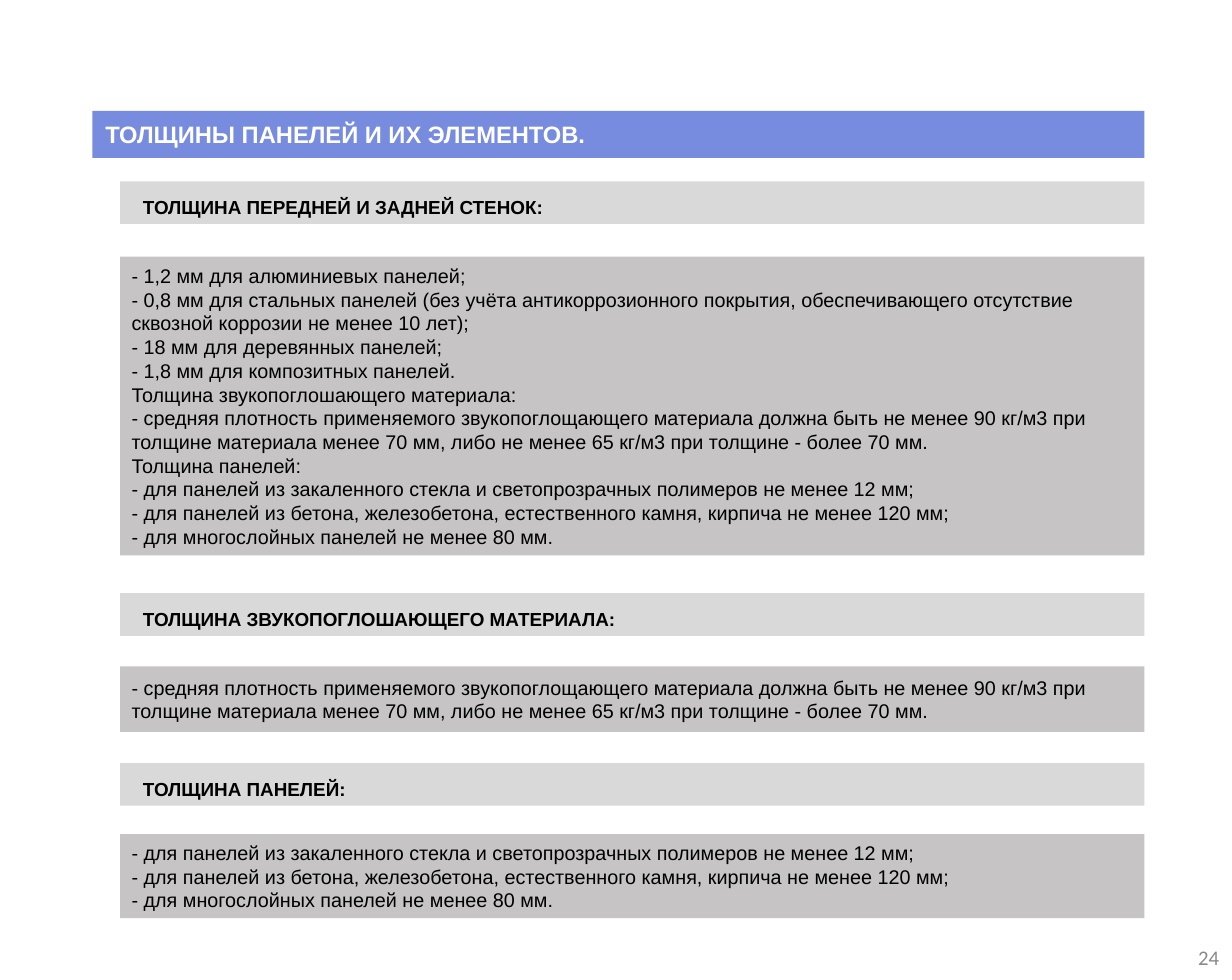
from pptx import Presentation
from pptx.dml.color import RGBColor
from pptx.enum.shapes import MSO_SHAPE
from pptx.enum.text import MSO_ANCHOR, PP_ALIGN
from pptx.util import Inches, Pt

TITLE = "ТОЛЩИНЫ ПАНЕЛЕЙ И ИХ ЭЛЕМЕНТОВ."
PAGE_NUMBER = "24"
DENSITY = [
    "- средняя плотность применяемого звукопоглощающего материала должна быть "
    "не менее 90 кг/м3 при толщине материала менее 70 мм, "
    "либо не менее 65 кг/м3 при толщине - более 70 мм.",
]
PANELS = [
    "- для панелей из закаленного стекла и светопрозрачных полимеров не менее 12 мм;",
    "- для панелей из бетона, железобетона, естественного камня, кирпича не менее 120 мм;",
    "- для многослойных панелей не менее 80 мм.",
]
WALLS = [
    "- 1,2 мм для алюминиевых панелей;",
    "- 0,8 мм для стальных панелей (без учёта антикоррозионного покрытия, "
    "обеспечивающего отсутствие сквозной коррозии не менее 10 лет);",
    "- 18 мм для деревянных панелей;",
    "- 1,8 мм для композитных панелей.",
    "Толщина звукопоглошающего материала:",
    *DENSITY,
    "Толщина панелей:",
    *PANELS,
]
# heading, heading top, details, details top, details height
SECTIONS = [
    ("ТОЛЩИНА ПЕРЕДНЕЙ И ЗАДНЕЙ СТЕНОК:", 2.55, WALLS, 3.61, 4.2),
    ("ТОЛЩИНА ЗВУКОПОГЛОШАЮЩЕГО МАТЕРИАЛА:", 8.34, DENSITY, 9.37, 0.92),
    ("ТОЛЩИНА ПАНЕЛЕЙ:", 10.73, PANELS, 11.73, 1.18),
]
RIGHT_EDGE = 16.09
TITLE_LEFT, SECTION_LEFT = 1.3, 1.69
HEADING_HEIGHT = 0.6


def color(hex_code):
    return RGBColor.from_string(hex_code)


def write(shape, lines, size, ink, inset, bold=False, font="Arial",
          align=PP_ALIGN.LEFT, spacing=None):
    """Fill a shape with paragraphs; inset is (left, top, right, bottom)."""
    frame = shape.text_frame
    frame.word_wrap = True
    frame.vertical_anchor = MSO_ANCHOR.MIDDLE
    (frame.margin_left, frame.margin_top,
     frame.margin_right, frame.margin_bottom) = map(Inches, inset)
    frame.text = "\n".join(lines)
    for paragraph in frame.paragraphs:
        paragraph.alignment = align
        paragraph.line_spacing = spacing
        for run in paragraph.runs:
            run.font.name, run.font.size, run.font.bold = font, Pt(size), bold
            run.font.color.rgb = color(ink)


def add_bar(left, top, height, fill):
    """Add a borderless rectangle reaching the common right edge."""
    bar = slide.shapes.add_shape(
        MSO_SHAPE.RECTANGLE, Inches(left), Inches(top),
        Inches(RIGHT_EDGE - left), Inches(height))
    bar.shadow.inherit = False
    bar.fill.solid()
    bar.fill.fore_color.rgb = color(fill)
    bar.line.fill.background()
    return bar


deck = Presentation()
deck.slide_width, deck.slide_height = Inches(17.32), Inches(13.78)
slide = deck.slides.add_slide(deck.slide_layouts[6])

page_box = slide.shapes.add_textbox(
    Inches(13.28), Inches(13.1), Inches(4.04), Inches(0.73))
write(page_box, [PAGE_NUMBER], 21, "898989", (0.18, 0.09, 0.18, 0.09),
      font="Calibri", align=PP_ALIGN.RIGHT)

write(add_bar(TITLE_LEFT, 1.56, 0.66, "778CDF"), [TITLE], 24, "FFFFFF",
      (0.18, 0, 0.18, 0), bold=True)

for heading, heading_top, details, details_top, details_height in SECTIONS:
    write(add_bar(SECTION_LEFT, heading_top, HEADING_HEIGHT, "D9D9D9"), [heading],
          19.1, "000000", (0.32, 0, 0.18, 0), bold=True, spacing=1.4)
    write(add_bar(SECTION_LEFT, details_top, details_height, "C6C4C5"), details,
          20, "000000", (0.16, 0, 0, 0))

deck.save("out.pptx")
